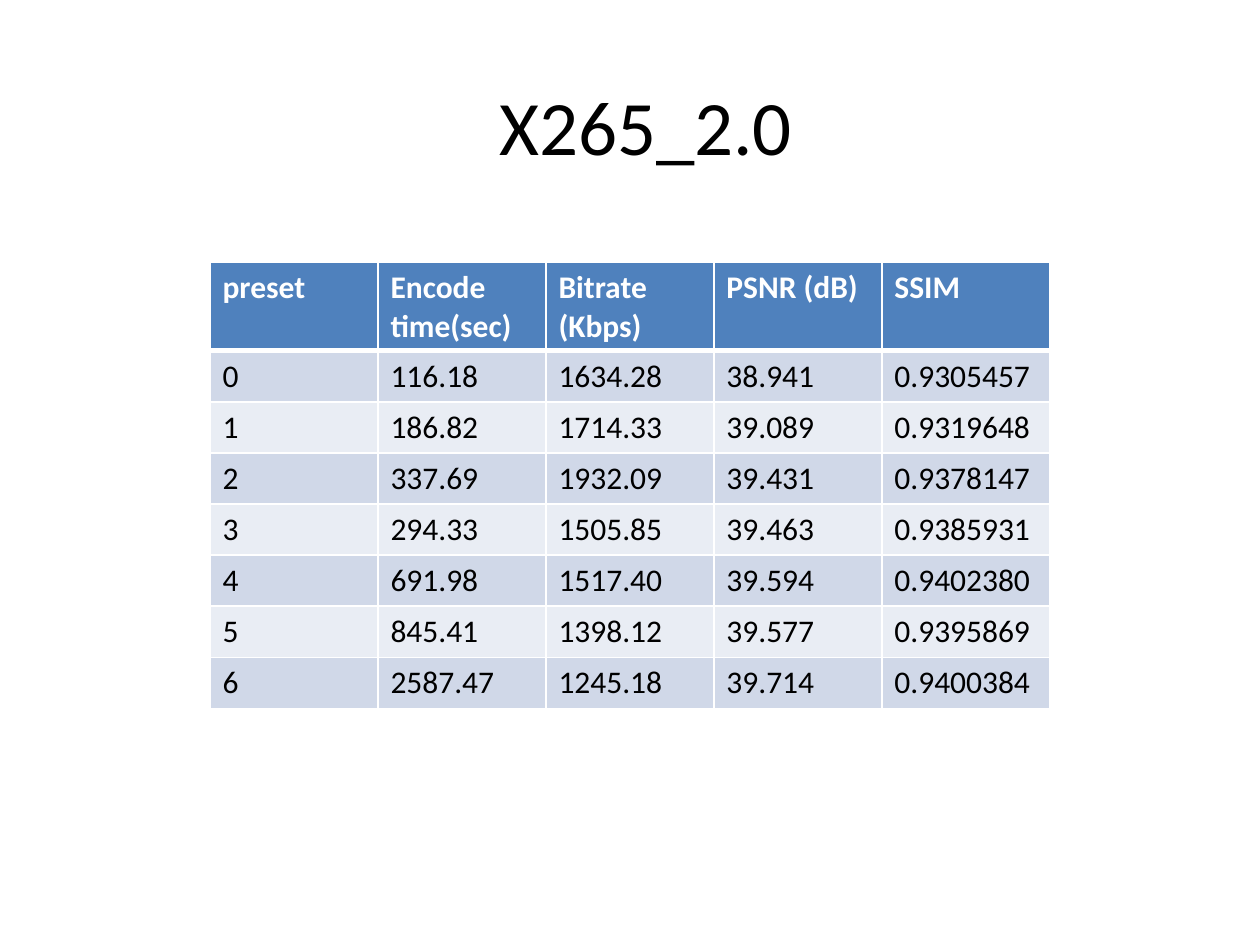
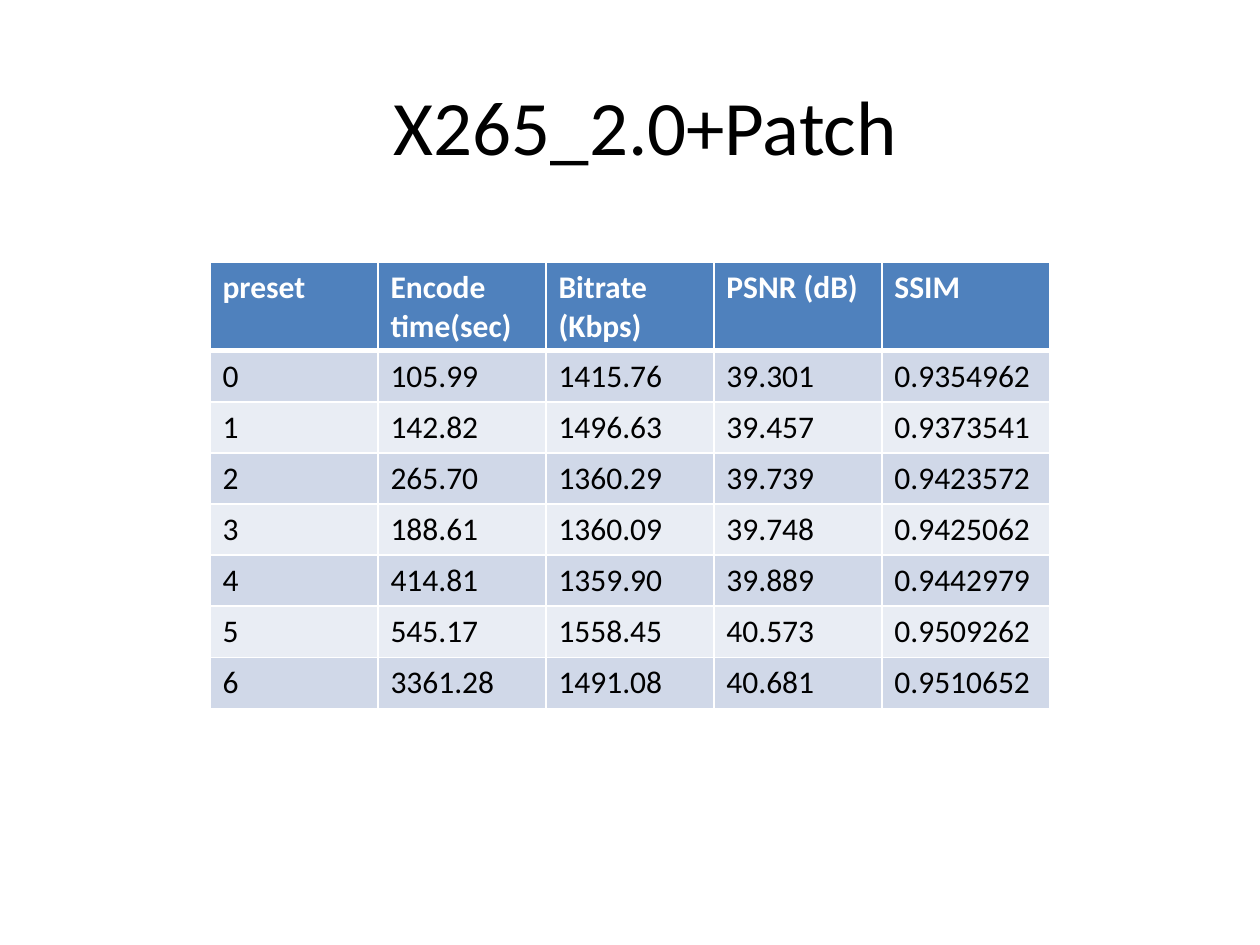
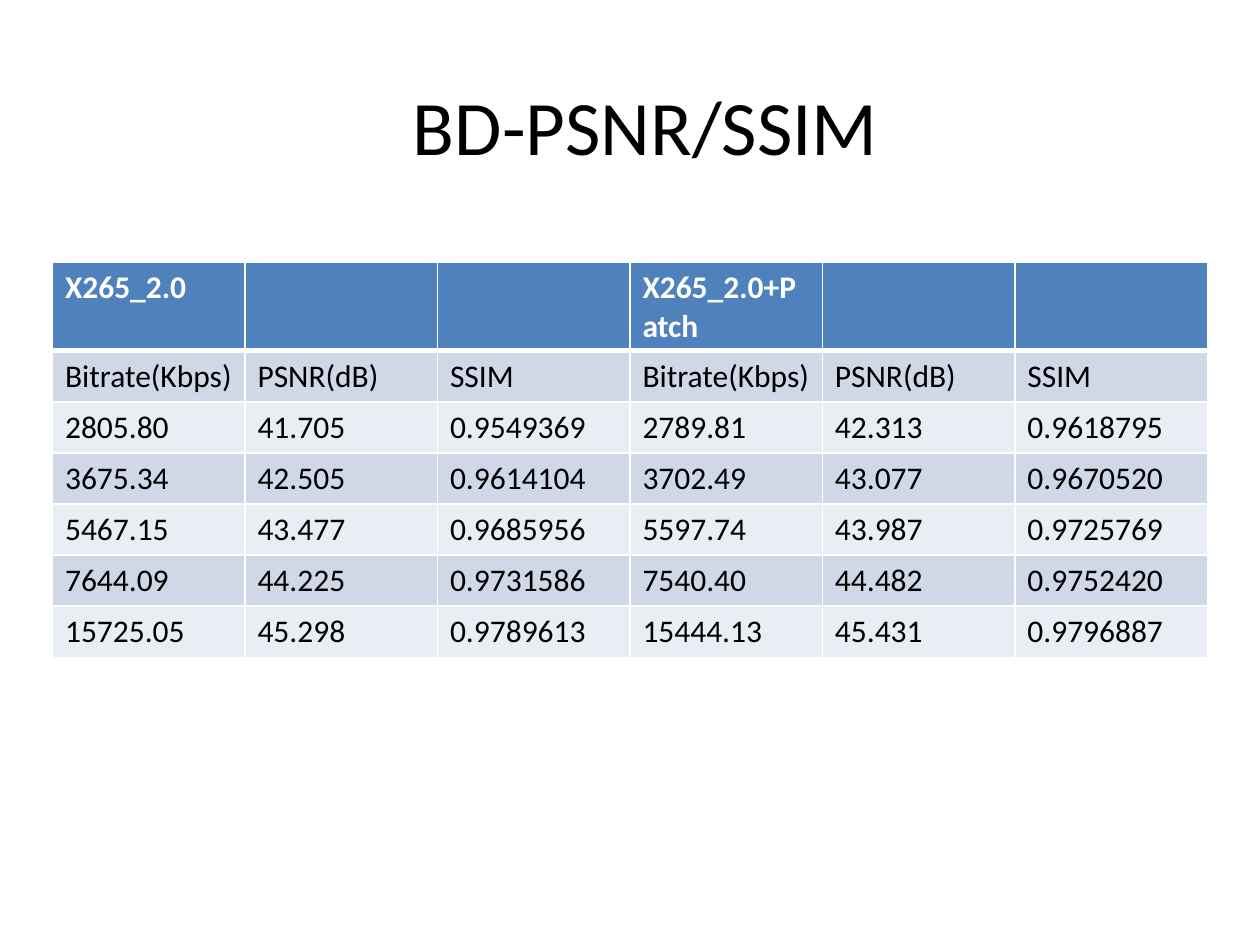
"""Build three slides of encoder benchmark tables."""
from dataclasses import dataclass

from lxml import etree
from pptx import Presentation
from pptx import util as u
from pptx.dml.color import RGBColor
from pptx.enum import text
from pptx.oxml import ns


@dataclass(frozen=True)
class Theme:
    font: str = "Calibri"
    title_size: int = 44
    cell_size: int = 18
    ink: str = "000000"
    header_ink: str = "FFFFFF"
    header_fill: str = "4F81BD"
    bands: tuple = ("D0D8E8", "E9EDF4")
    rule: str = "FFFFFF"
    thin: int = 1
    thick: int = 3


THEME = Theme()
SLIDE_WIDTH, SLIDE_HEIGHT = 720, 540
TITLE_BOX = (54, 28, 630, 86)
TABLE_TOP, ROW_HEIGHT = 150, 29.2

PRESET_HEADER = ("preset", "Encode time(sec)", "Bitrate (Kbps)", "PSNR (dB)", "SSIM")
MEASURES = ("Bitrate(Kbps)", "PSNR(dB)", "SSIM")

SLIDES = [
    {"title": "X265_2.0", "width": 480, "rows": [
        PRESET_HEADER,
        ("0", "116.18", "1634.28", "38.941", "0.9305457"),
        ("1", "186.82", "1714.33", "39.089", "0.9319648"),
        ("2", "337.69", "1932.09", "39.431", "0.9378147"),
        ("3", "294.33", "1505.85", "39.463", "0.9385931"),
        ("4", "691.98", "1517.40", "39.594", "0.9402380"),
        ("5", "845.41", "1398.12", "39.577", "0.9395869"),
        ("6", "2587.47", "1245.18", "39.714", "0.9400384"),
    ]},
    {"title": "X265_2.0+Patch", "width": 480, "rows": [
        PRESET_HEADER,
        ("0", "105.99", "1415.76", "39.301", "0.9354962"),
        ("1", "142.82", "1496.63", "39.457", "0.9373541"),
        ("2", "265.70", "1360.29", "39.739", "0.9423572"),
        ("3", "188.61", "1360.09", "39.748", "0.9425062"),
        ("4", "414.81", "1359.90", "39.889", "0.9442979"),
        ("5", "545.17", "1558.45", "40.573", "0.9509262"),
        ("6", "3361.28", "1491.08", "40.681", "0.9510652"),
    ]},
    {"title": "BD-PSNR/SSIM", "width": 660, "rows": [
        ("X265_2.0", "", "", "X265_2.0+Patch", "", ""),
        MEASURES + MEASURES,
        ("2805.80", "41.705", "0.9549369", "2789.81", "42.313", "0.9618795"),
        ("3675.34", "42.505", "0.9614104", "3702.49", "43.077", "0.9670520"),
        ("5467.15", "43.477", "0.9685956", "5597.74", "43.987", "0.9725769"),
        ("7644.09", "44.225", "0.9731586", "7540.40", "44.482", "0.9752420"),
        ("15725.05", "45.298", "0.9789613", "15444.13", "45.431", "0.9796887"),
    ]},
]


def style(paragraph, size, ink, bold=False):
    font = paragraph.font
    font.name, font.size, font.bold = THEME.font, u.Pt(size), bold
    font.color.rgb = RGBColor.from_string(ink)


def add_title(slide, wording):
    title = slide.shapes.add_textbox(*map(u.Pt, TITLE_BOX)).text_frame
    title.word_wrap = True
    title.vertical_anchor = text.MSO_ANCHOR.MIDDLE
    heading = title.paragraphs[0]
    heading.text = wording
    heading.alignment = text.PP_ALIGN.CENTER
    style(heading, THEME.title_size, THEME.ink)


def rule_cell(cell, row):
    widths = {
        "L": THEME.thin,
        "R": THEME.thin,
        "T": THEME.thick if row == 1 else THEME.thin,
        "B": THEME.thick if row == 0 else THEME.thin,
    }
    properties = cell._tc.get_or_add_tcPr()
    for side, width in widths.items():
        line = etree.SubElement(properties, ns.qn(f"a:ln{side}"), w=str(u.Pt(width)))
        fill = etree.SubElement(line, ns.qn("a:solidFill"))
        etree.SubElement(fill, ns.qn("a:srgbClr"), val=THEME.rule)


def add_results(slide, rows, width):
    columns = len(rows[0])
    left = (SLIDE_WIDTH - width) / 2
    frame = (left, TABLE_TOP, width, ROW_HEIGHT * len(rows))
    results = slide.shapes.add_table(len(rows), columns, *map(u.Pt, frame)).table
    for column in results.columns:
        column.width = u.Pt(width / columns)
    for r, values in enumerate(rows):
        results.rows[r].height = u.Pt(ROW_HEIGHT)
        header = r == 0
        fill = THEME.header_fill if header else THEME.bands[(r - 1) % 2]
        ink = THEME.header_ink if header else THEME.ink
        for c, value in enumerate(values):
            cell = results.cell(r, c)
            cell.text = value
            style(cell.text_frame.paragraphs[0], THEME.cell_size, ink, header)
            rule_cell(cell, r)
            cell.fill.solid()
            cell.fill.fore_color.rgb = RGBColor.from_string(fill)


def main():
    deck = Presentation()
    deck.slide_width, deck.slide_height = u.Pt(SLIDE_WIDTH), u.Pt(SLIDE_HEIGHT)
    for content in SLIDES:
        slide = deck.slides.add_slide(deck.slide_layouts[6])
        add_title(slide, content["title"])
        add_results(slide, content["rows"], content["width"])
    deck.save("out.pptx")


if __name__ == "__main__":
    main()
